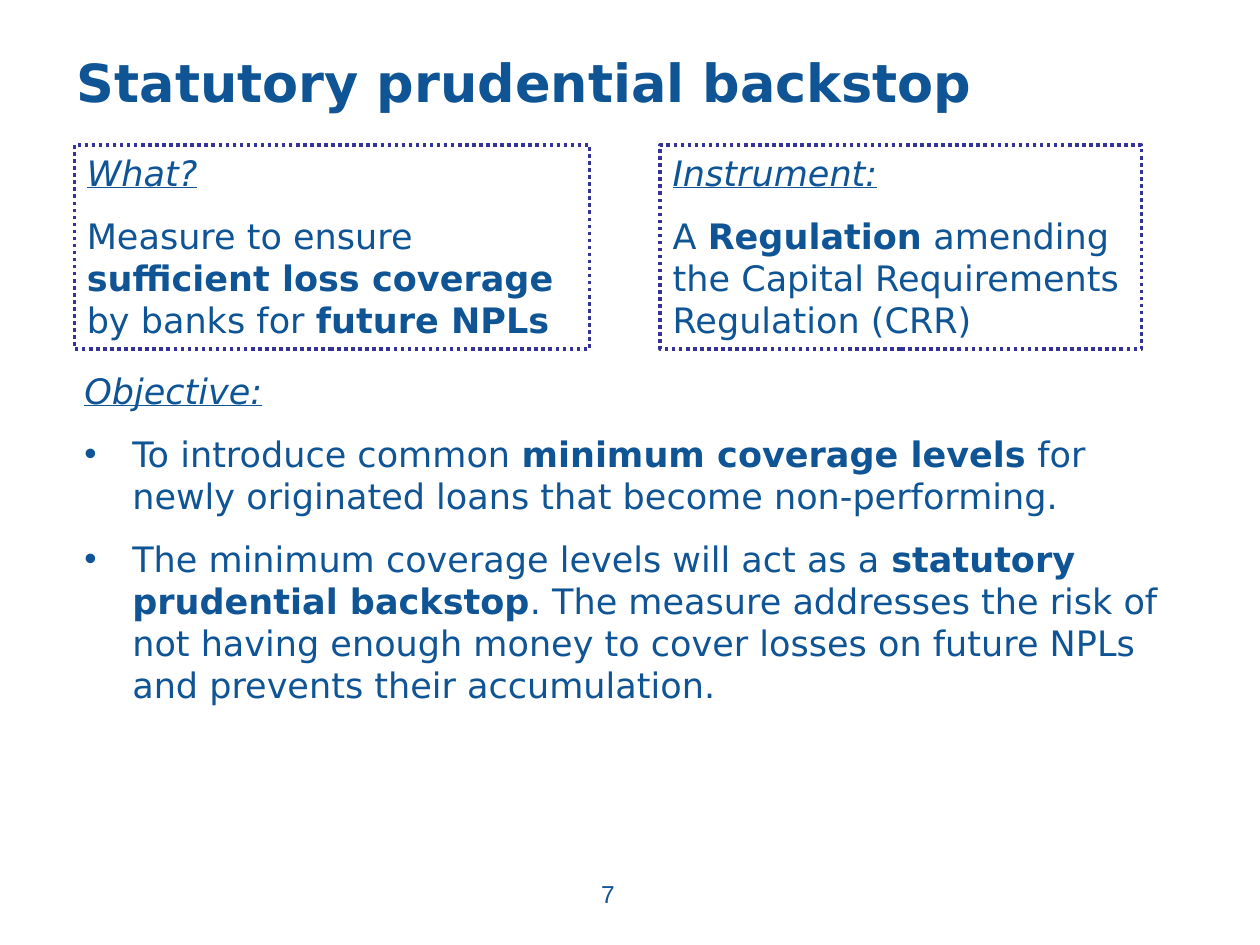
"""Build the slide on the statutory prudential backstop."""
from lxml.etree import SubElement
from pptx import Presentation
from pptx.dml.color import RGBColor
from pptx.enum.dml import MSO_LINE
from pptx.enum.shapes import MSO_SHAPE
from pptx.enum.text import MSO_ANCHOR, MSO_AUTO_SIZE, PP_ALIGN
from pptx.oxml.ns import qn
from pptx.util import Pt

TITLE = "Statutory prudential backstop"
PAGE = "7"
HEAD = {"italic": True, "underline": True}
BOLD = {"bold": True}
BOXES = [
    {"left": 42.5, "width": 294.5, "paras": [
        [("What?", HEAD)],
        [("Measure to ensure ", {}), ("sufficient loss coverage", BOLD),
         (" by banks for ", {}), ("future NPLs", BOLD)],
    ]},
    {"left": 377.3, "width": 275, "paras": [
        [("Instrument:", HEAD)],
        [("A ", {}), ("Regulation", BOLD),
         (" amending the Capital Requirements Regulation (CRR)", {})],
    ]},
]
OBJECTIVE = [
    [("Objective:", HEAD)],
    [("To introduce common ", {}), ("minimum coverage levels", BOLD),
     (" for newly originated loans that become non-performing.", {})],
    [("The minimum coverage levels will act as a ", {}),
     ("statutory prudential backstop", BOLD),
     (". The measure addresses the risk of not having enough money to cover"
      " losses on future NPLs and prevents their accumulation.", {})],
]
THEME = {
    "text": RGBColor(0x0F, 0x54, 0x94), "line": RGBColor(0x33, 0x33, 0x99),
    "fill": RGBColor(0xFF, 0xFF, 0xFF), "font": "DejaVu Sans",
    "page_font": "Arial", "title": 30, "body": 20, "page": 14,
    "gap": 12, "indent": 27.4,
}


def place(sp, left, top, width, height):
    box = {"left": left, "top": top, "width": width, "height": height}
    for name, value in box.items():
        setattr(sp, name, Pt(value))


def add_run(p, text, size, font=THEME["font"], **fmt):
    r = p.add_run()
    r.text = text
    for name, value in {"name": font, "size": Pt(size), **fmt}.items():
        setattr(r.font, name, value)
    r.font.color.rgb = THEME["text"]


def set_bullet(p, char=None):
    pPr = p._p.get_or_add_pPr()
    indent = Pt(THEME["indent"]) if char else 0
    pPr.set("marL", str(indent))
    pPr.set("indent", str(-indent))
    if char:
        SubElement(pPr, qn("a:buFont"), typeface="Arial")
        SubElement(pPr, qn("a:buChar"), char=char)
    else:
        SubElement(pPr, qn("a:buNone"))


def fill_text(tf, paras, bullet=None):
    for i, runs in enumerate(paras):
        p = tf.paragraphs[0] if i == 0 else tf.add_paragraph()
        set_bullet(p, bullet if i else None)
        p.alignment = PP_ALIGN.LEFT
        p.space_before = Pt(THEME["gap"] if i else 0)
        for text, fmt in runs:
            add_run(p, text, THEME["body"], **fmt)


def add_box(s, left, width, paras):
    sp = s.shapes.add_shape(MSO_SHAPE.RECTANGLE, Pt(left), Pt(82.8), Pt(width), Pt(116.6))
    sp.shadow.inherit = False
    sp.fill.solid()
    sp.fill.fore_color.rgb = THEME["fill"]
    sp.line.color.rgb = THEME["line"]
    sp.line.width = Pt(2)
    sp.line.dash_style = MSO_LINE.ROUND_DOT
    tf = sp.text_frame
    frame = {"word_wrap": True, "vertical_anchor": MSO_ANCHOR.TOP,
             "auto_size": MSO_AUTO_SIZE.SHAPE_TO_FIT_TEXT}
    for name, value in frame.items():
        setattr(tf, name, value)
    fill_text(tf, paras)


def main():
    prs = Presentation()
    prs.slide_width, prs.slide_height = Pt(720), Pt(540)
    s = prs.slides.add_slide(prs.slide_layouts[1])

    title, body = s.placeholders
    place(title, 36.7, 15.1, 648, 62.6)
    title.text_frame.auto_size = MSO_AUTO_SIZE.NONE
    title.text_frame.vertical_anchor = MSO_ANCHOR.MIDDLE
    p = title.text_frame.paragraphs[0]
    p.alignment = PP_ALIGN.LEFT
    add_run(p, TITLE, THEME["title"], bold=True)

    place(body, 41, 207.4, 648, 285.8)
    body.text_frame.auto_size = MSO_AUTO_SIZE.NONE
    fill_text(body.text_frame, OBJECTIVE, "•")

    for box in BOXES:
        add_box(s, **box)

    page = s.shapes.add_textbox(Pt(263.5), Pt(499), Pt(167.8), Pt(37.4))
    page.text_frame.word_wrap = True
    p = page.text_frame.paragraphs[0]
    p.alignment = PP_ALIGN.CENTER
    add_run(p, PAGE, THEME["page"], THEME["page_font"])

    prs.save("out.pptx")


if __name__ == "__main__":
    main()
